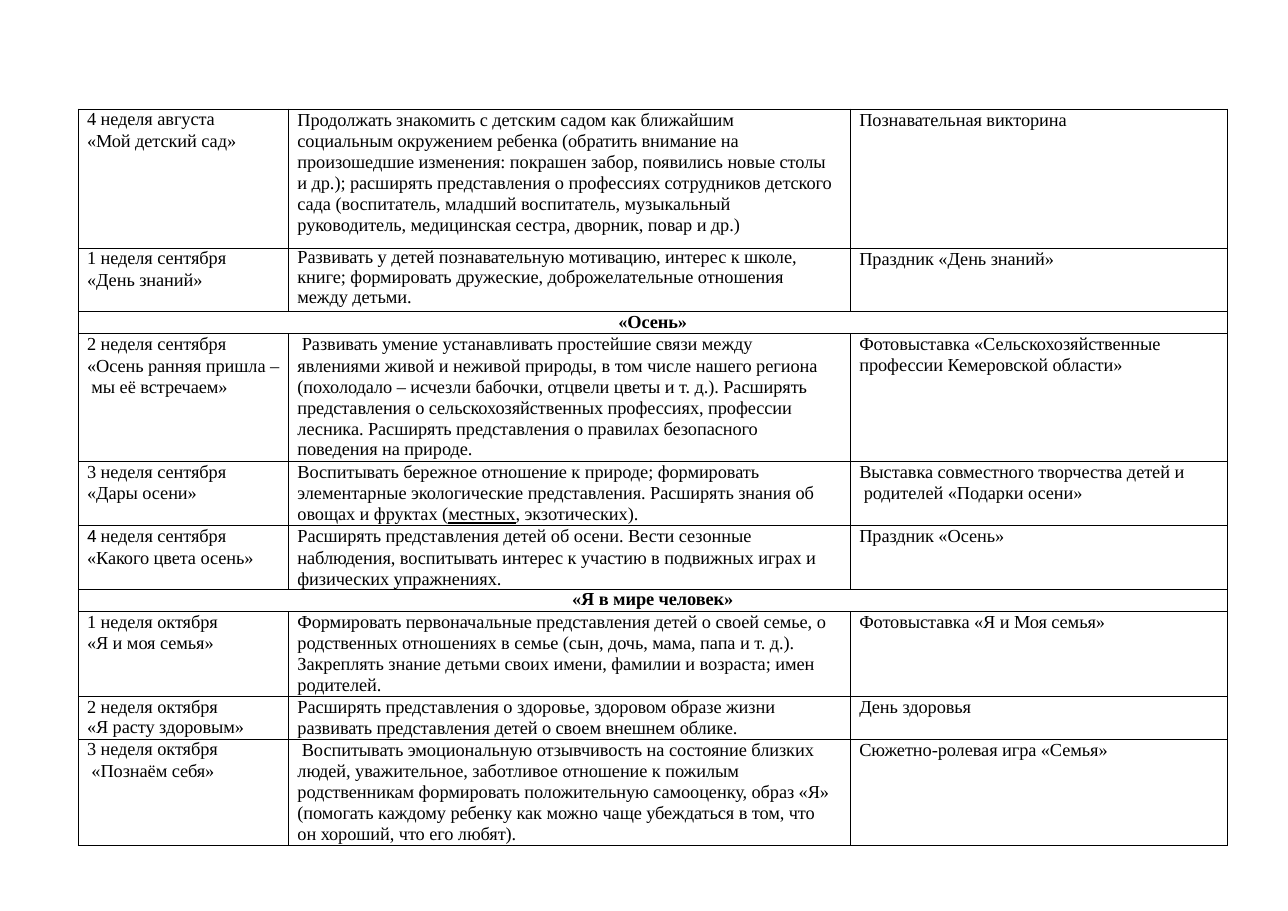
from dataclasses import dataclass

from lxml import etree
from pptx import Presentation
from pptx.dml.color import RGBColor
from pptx.enum.text import PP_ALIGN
from pptx.oxml.ns import qn
from pptx.util import Inches, Pt

CENTER = PP_ALIGN.CENTER
LEFT = PP_ALIGN.LEFT
BODY_FONT = "Times New Roman"
BLACK = "000000"
WHITE = "FFFFFF"
COLUMN_WIDTHS = [1.91, 5.1, 3.42]
ROW_HEIGHTS = [1.26, 0.58, 0.2, 1.16, 0.58, 0.58, 0.2, 0.77, 0.39, 0.96]


@dataclass
class Para:
    text: str
    leading: float = 13.8
    before: float = 0
    indent: float = 0.08
    first: float = 0


@dataclass
class Week:
    number: str
    month: str
    topic: Para
    goals: list
    event: Para
    leading: float = 13.5
    number_font: str = BODY_FONT
    number_size: float = 12


PLAN = [
    Week("4", "августа", Para("«Мой детский сад»", 14.1), [
        Para("Продолжать знакомить с детским садом как ближайшим\n"
             "социальным окружением ребенка (обратить внимание на"),
        Para("произошедшие изменения: покрашен забор, появились новые столы\n"
             "и др.); расширять представления о профессиях сотрудников детского\n"
             "сада (воспитатель, младший воспитатель, музыкальный\n"
             "руководитель, медицинская сестра, дворник, повар и др.)"),
    ], Para("Познавательная викторина")),
    Week("1", "сентября", Para("«День знаний»", 14.1), [
        Para("Развивать у детей познавательную мотивацию, интерес к школе,\n"
             "книге; формировать дружеские, доброжелательные отношения\n"
             "между детьми.", 13.1),
    ], Para("Праздник «День знаний»", 13.9), 13.7),
    "«Осень»",
    Week("2", "сентября", Para("«Осень ранняя пришла –\n мы её встречаем»", 13.8, 0.7), [
        Para("Развивать умение устанавливать простейшие связи между", 13.5, indent=0.12),
        Para("явлениями живой и неживой природы, в том числе нашего региона\n"
             "(похолодало – исчезли бабочки, отцвели цветы и т. д.). Расширять\n"
             "представления о сельскохозяйственных профессиях, профессии\n"
             "лесника. Расширять представления о правилах безопасного", 13.8, 0.7),
        Para("поведения на природе.", 12.9),
    ], Para("Фотовыставка «Сельскохозяйственные\nпрофессии Кемеровской области»")),
    Week("3", "сентября", Para("«Дары осени»", 14.1), [
        Para("Воспитывать бережное отношение к природе; формировать\n"
             "элементарные экологические представления. Расширять знания об\n"
             "овощах и фруктах (_местных_, экзотических)."),
    ], Para("Выставка совместного творчества детей и\n родителей «Подарки осени»")),
    Week("4", "сентября", Para("«Какого цвета осень»", 14.3), [
        Para("Расширять представления детей об осени. Вести сезонные", 13.5),
        Para("наблюдения, воспитывать интерес к участию в подвижных играх и\n"
             "физических упражнениях.", 13.8, 0.7),
    ], Para("Праздник «Осень»"), 13.7, "Roboto", 11),
    "«Я в мире человек»",
    Week("1", "октября", Para("«Я и моя семья»", 14.1), [
        Para("Формировать первоначальные представления детей о своей семье, о\n"
             "родственных отношениях в семье (сын, дочь, мама, папа и т. д.)."),
        Para("Закреплять знание детьми своих имени, фамилии и возраста; имен\n"
             "родителей."),
    ], Para("Фотовыставка «Я и Моя семья»")),
    Week("2", "октября", Para("«Я расту здоровым»", 13.6), [
        Para("Расширять представления о здоровье, здоровом образе жизни\n"
             "развивать представления детей о своем внешнем облике."),
    ], Para("День здоровья", 13.9), 13.6),
    Week("3", "октября", Para("«Познаём себя»", 14.1, indent=0.12), [
        Para("Воспитывать эмоциональную отзывчивость на состояние близких\n"
             "людей, уважительное, заботливое отношение к пожилым\n"
             "родственникам формировать положительную самооценку, образ «Я»\n"
             "(помогать каждому ребенку как можно чаще убеждаться в том, что\n"
             "он хороший, что его любят).", first=0.04),
    ], Para("Сюжетно-ролевая игра «Семья»")),
]


def color(value):
    return RGBColor.from_string(value)


def add_run(paragraph, text, font=BODY_FONT, size=12, bold=False, underline=False):
    run = paragraph.add_run()
    run.text = text
    run.font.name = font
    run.font.size = Pt(size)
    run.font.bold = bold
    run.font.underline = underline
    run.font.color.rgb = color(BLACK)
    run._r.get_or_add_rPr().set("spc", "-5")


def start_paragraph(cell, position, para, align=LEFT):
    frame = cell.text_frame
    paragraph = frame.add_paragraph() if position else frame.paragraphs[0]
    paragraph.alignment = align
    paragraph.line_spacing = Pt(para.leading)
    paragraph.space_before = Pt(para.before)
    properties = paragraph._p.get_or_add_pPr()
    properties.set("marL", str(Inches(para.indent)))
    properties.set("indent", str(Inches(para.first)))
    return paragraph


def write_paragraph(cell, position, para):
    paragraph = start_paragraph(cell, position, para)
    for number, line in enumerate(para.text.split("\n")):
        if number:
            paragraph.add_line_break()
        for part, piece in enumerate(line.split("_")):
            add_run(paragraph, piece, underline=part == 1)


def format_cell(cell):
    cell.margin_left = cell.margin_right = cell.margin_top = cell.margin_bottom = 0
    cell.fill.solid()
    cell.fill.fore_color.rgb = color(WHITE)
    properties = cell._tc.get_or_add_tcPr()
    for position, side in enumerate(("lnL", "lnR", "lnT", "lnB")):
        border = etree.Element(qn(f"a:{side}"), w=str(Pt(0.5)))
        fill = etree.SubElement(border, qn("a:solidFill"))
        etree.SubElement(fill, qn("a:srgbClr"), val=BLACK)
        properties.insert(position, border)


def fill_section(cells, heading):
    cells[0].merge(cells[-1])
    paragraph = start_paragraph(cells[0], 0, Para(heading, 13.3, indent=0), CENTER)
    add_run(paragraph, heading, bold=True)


def fill_week(cells, week):
    date, goals, event = cells
    paragraph = start_paragraph(date, 0, Para("", week.leading))
    add_run(paragraph, f"{week.number} ", week.number_font, week.number_size)
    add_run(paragraph, f"неделя {week.month}")
    write_paragraph(date, 1, week.topic)
    for position, goal in enumerate(week.goals):
        write_paragraph(goals, position, goal)
    write_paragraph(event, 0, week.event)


def add_plan(slide, left, top, width, height):
    plan = slide.shapes.add_table(
        len(PLAN), len(COLUMN_WIDTHS),
        Inches(left), Inches(top), Inches(width), Inches(height)).table
    plan.first_row = False
    plan.horz_banding = False
    for column, share in zip(plan.columns, COLUMN_WIDTHS):
        column.width = Inches(width * share / sum(COLUMN_WIDTHS))
    for row, row_height, entry in zip(plan.rows, ROW_HEIGHTS, PLAN):
        row.height = Inches(row_height)
        cells = list(row.cells)
        for cell in cells:
            format_cell(cell)
        if isinstance(entry, Week):
            fill_week(cells, entry)
        else:
            fill_section(cells, entry)


def main():
    presentation = Presentation()
    presentation.slide_width = Inches(11.69)
    presentation.slide_height = Inches(8.27)
    slide = presentation.slides.add_slide(presentation.slide_layouts[6])
    add_plan(slide, 0.71, 0.99, 10.43, sum(ROW_HEIGHTS))
    presentation.save("out.pptx")


if __name__ == "__main__":
    main()
